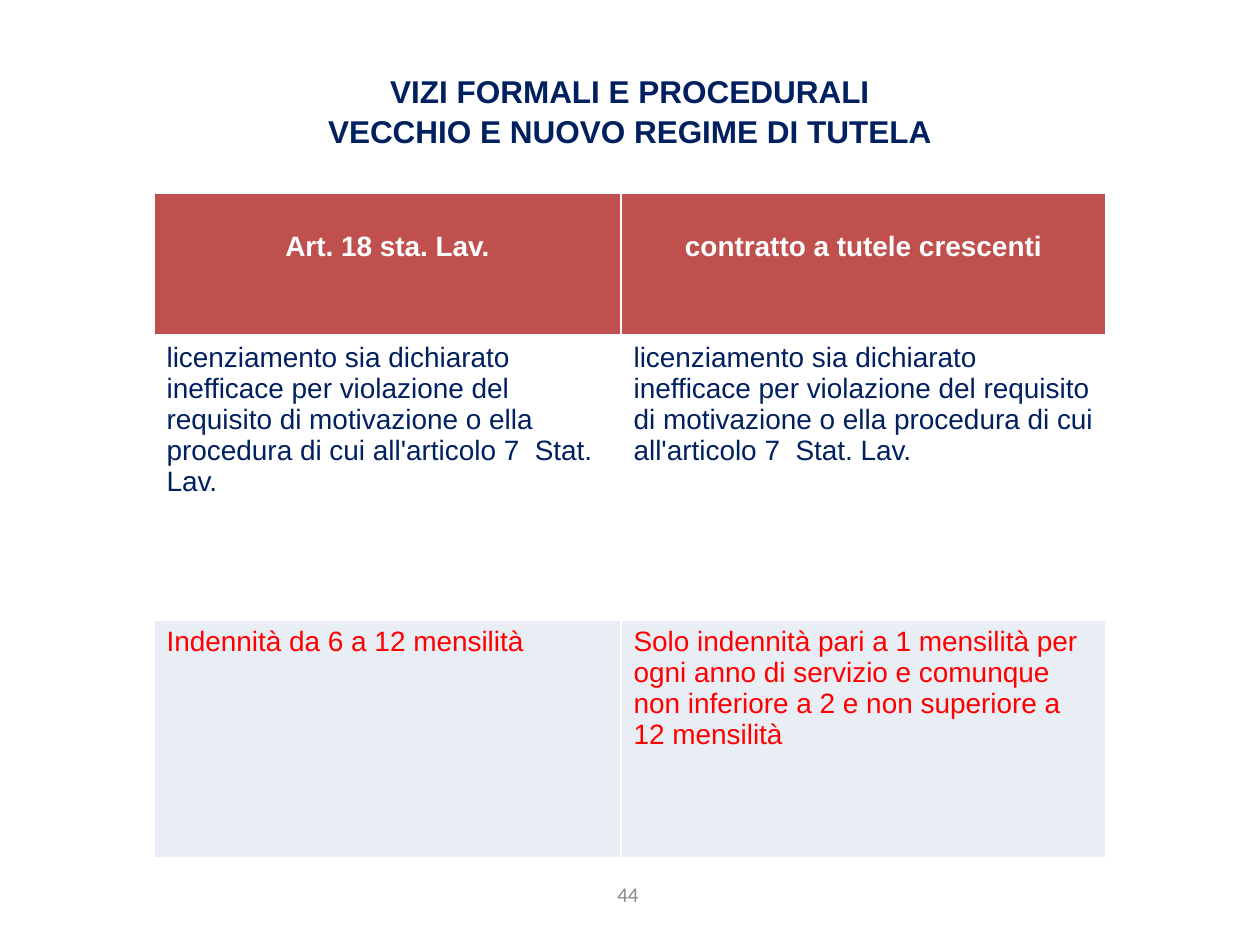
from lxml.etree import SubElement
from pptx import Presentation
from pptx.dml.color import RGBColor
from pptx.enum.text import MSO_ANCHOR as Anchor, PP_ALIGN as Align
from pptx.oxml.ns import qn
from pptx.util import Emu, Pt

SCALE = 914400 / 126
COLORS = {
    "navy": "002060",
    "red": "FF0000",
    "brick": "C0504D",
    "pale": "E9EDF4",
    "white": "FFFFFF",
    "gray": "8C8C8C",
}
CLAUSE = (
    "licenziamento sia dichiarato inefficace per violazione del requisito "
    "di motivazione o ella procedura di cui all'articolo 7  Stat. Lav."
)
ROWS = [
    ("Art. 18 sta. Lav.", "contratto a tutele crescenti"),
    (CLAUSE, CLAUSE),
    (
        "Indennità da 6 a 12 mensilità",
        "Solo indennità pari a 1 mensilità per ogni anno di servizio e comunque "
        "non inferiore a 2 e non superiore a 12 mensilità",
    ),
]
STYLES = [
    dict(color="white", bold=True, align=Align.CENTER),
    dict(color="navy"),
    dict(color="red"),
]
FILLS = ["brick", "white", "pale"]
WIDTHS = [467, 485]
HEIGHTS = [143, 284, 238]
HEAD_TOP = 38


def px(n):
    return Emu(round(n * SCALE))


def rgb(name):
    return RGBColor.from_string(COLORS[name])


def write(frame, text, size=16, font="Arial", color="navy", bold=False,
          align=Align.LEFT, before=0):
    """Fill a text frame with one paragraph for each line of text."""
    frame.word_wrap = True
    for i, line in enumerate(text.split("\n")):
        para = frame.add_paragraph() if i else frame.paragraphs[0]
        para.alignment = align
        para.space_before = Pt(before)
        run = para.add_run()
        run.text = line
        run.font.size = Pt(size)
        run.font.name = font
        run.font.bold = bold
        run.font.color.rgb = rgb(color)


def add_text(slide, box, text, anchor=Anchor.TOP, **style):
    frame = slide.shapes.add_textbox(*map(px, box)).text_frame
    frame.margin_left = frame.margin_right = 0
    frame.vertical_anchor = anchor
    write(frame, text, **style)


def add_edges(cell, color, base):
    """Draw the cell borders, with the bottom one base points wide."""
    props = cell._tc.get_or_add_tcPr()
    sides = {"lnL": 1, "lnR": 1, "lnT": 1, "lnB": base}
    for i, (tag, width) in enumerate(sides.items()):
        line = SubElement(props, qn(f"a:{tag}"), w=str(Pt(width)))
        fill = SubElement(line, qn("a:solidFill"))
        SubElement(fill, qn("a:srgbClr"), val=COLORS[color])
        props.insert(i, line)


def add_grid(slide, left, top):
    size = (sum(WIDTHS), sum(HEIGHTS))
    box = map(px, (left, top, *size))
    table = slide.shapes.add_table(len(ROWS), len(WIDTHS), *box).table
    for col, width in zip(table.columns, WIDTHS):
        col.width = px(width)
    for r, texts in enumerate(ROWS):
        table.rows[r].height = px(HEIGHTS[r])
        for c, text in enumerate(texts):
            cell = table.cell(r, c)
            cell.fill.solid()
            cell.fill.fore_color.rgb = rgb(FILLS[r])
            if r == 0:
                cell.margin_top = px(HEAD_TOP)
            write(cell.text_frame, text, **STYLES[r])
            add_edges(cell, "white", 1 if r else 3)


def main():
    deck = Presentation()
    deck.slide_width, deck.slide_height = px(1260), px(945)
    slide = deck.slides.add_slide(deck.slide_layouts[6])
    add_text(slide, (481, 869, 294, 50), "44", anchor=Anchor.MIDDLE,
             size=12, font="Calibri", color="gray", align=Align.CENTER)
    add_text(slide, (315, 66, 630, 174),
             "VIZI FORMALI E PROCEDURALI\nVECCHIO E NUOVO REGIME DI TUTELA",
             size=18, bold=True, align=Align.CENTER, before=1)
    add_grid(slide, 154, 193)
    deck.save("out.pptx")


if __name__ == "__main__":
    main()
